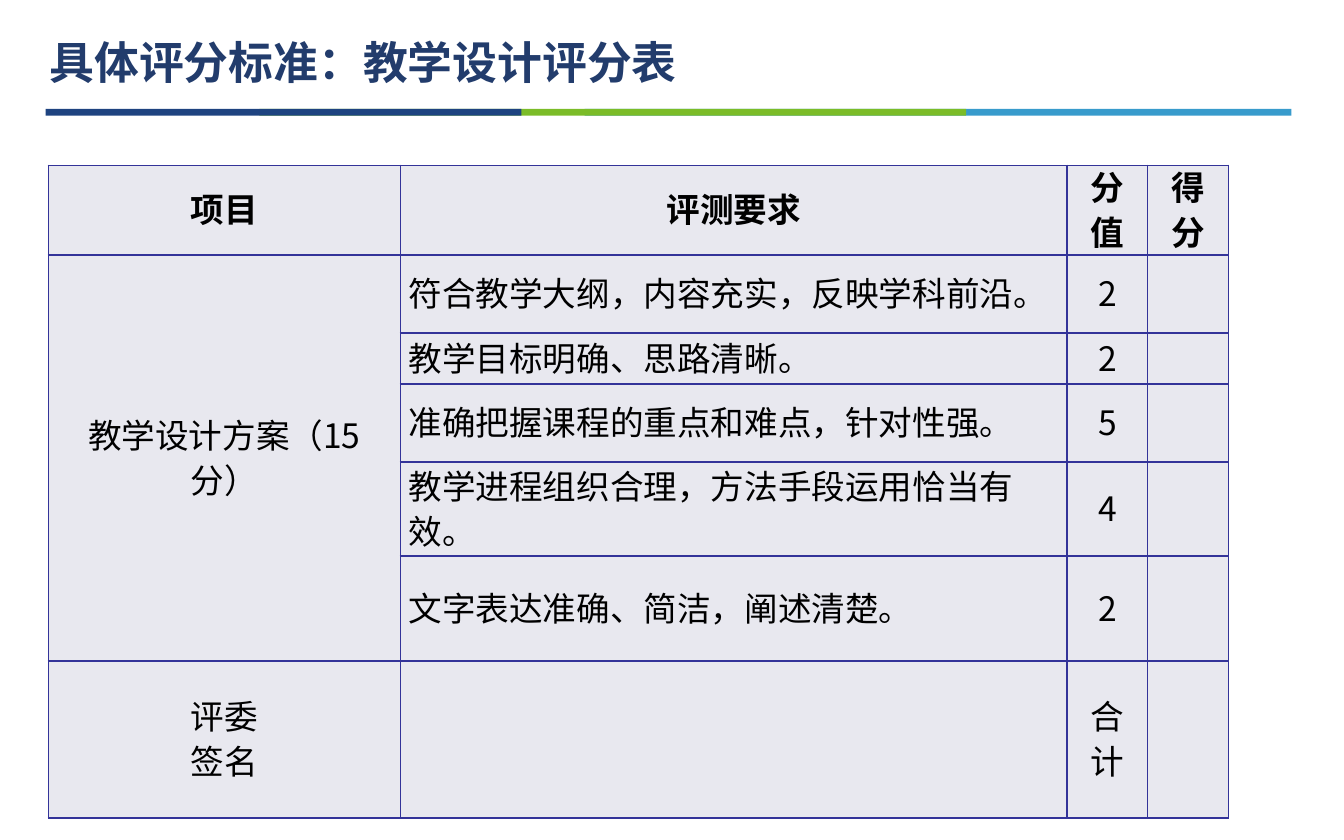
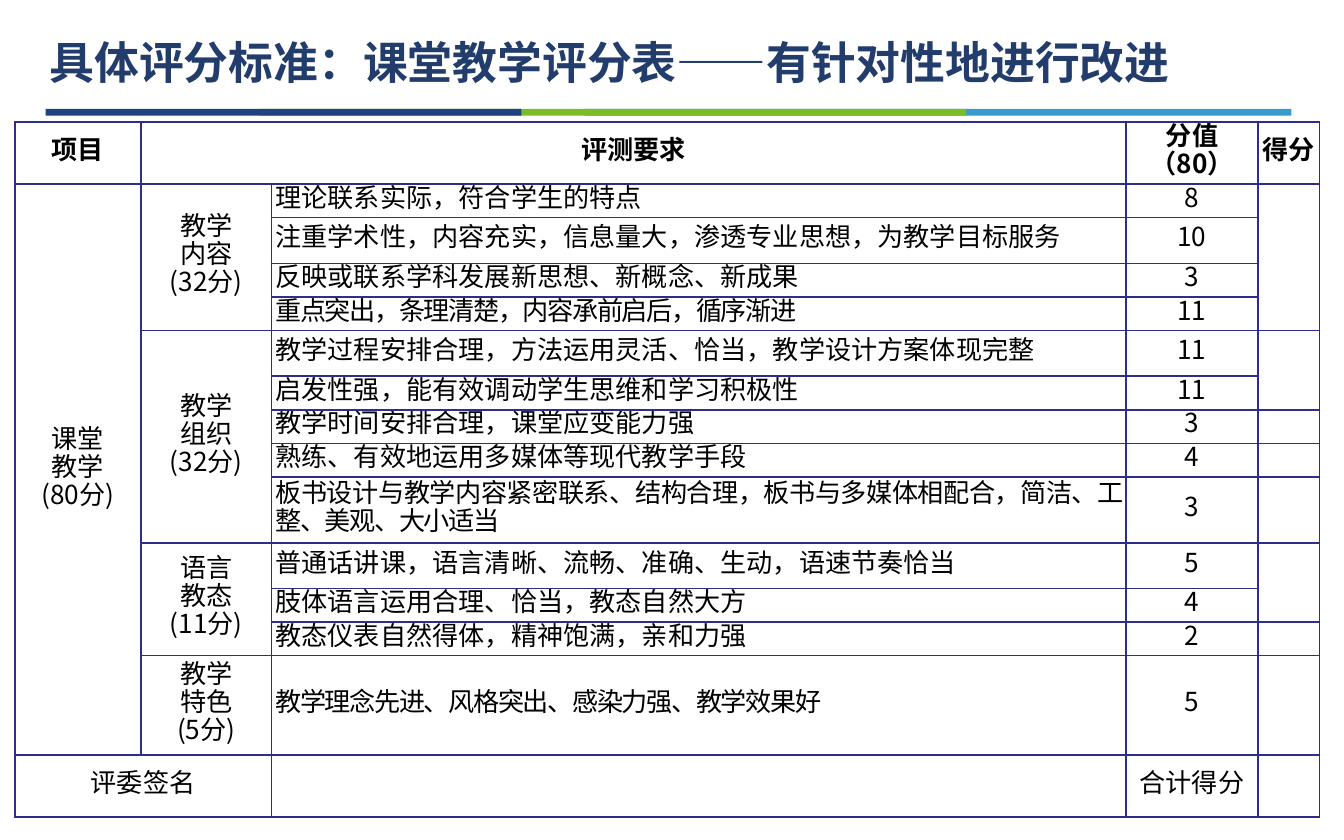
from lxml import etree
from pptx import Presentation
from pptx import util as u
from pptx.dml.color import RGBColor
from pptx.enum import shapes, text
from pptx.oxml import ns

# Shared style
FONT = "Noto Sans CJK SC"
BLACK = RGBColor(0x00, 0x00, 0x00)
TITLE_BLUE = RGBColor(0x22, 0x3C, 0x6C)
SKY = RGBColor(0x38, 0x9B, 0xCC)
GREEN = RGBColor(0x7B, 0xBC, 0x28)
NAVY = RGBColor(0x1E, 0x43, 0x80)
PALE = RGBColor(0xE8, 0xE8, 0xEF)
INDIGO = RGBColor(0x33, 0x33, 0x99)
DEEP_INDIGO = RGBColor(0x2D, 0x2D, 0x8A)
BANDS = [(4.35, 5.26, SKY), (1.93, 5.26, GREEN), (0.34, 3.54, NAVY)]
CENTER, LEFT, JUSTIFY = (
    text.PP_ALIGN.CENTER, text.PP_ALIGN.LEFT, text.PP_ALIGN.JUSTIFY)

# Content: merges are (first row, first column, last row, last column)
design_sheet = {
    "title": "具体评分标准：教学设计评分表",
    "title_width": 4.91,
    "at": (0.36, 1.23),
    "cols": [2.62, 4.96, 0.6, 0.6],
    "rows": [0.58, 0.58, 0.38, 0.58, 0.7, 0.78, 1.17],
    "cells": [
        ["项目", "评测要求", "分值", "得分"],
        ["教学设计方案（15分）", "符合教学大纲，内容充实，反映学科前沿。", "2", ""],
        ["", "教学目标明确、思路清晰。", "2", ""],
        ["", "准确把握课程的重点和难点，针对性强。", "5", ""],
        ["", "教学进程组织合理，方法手段运用恰当有效。", "4", ""],
        ["", "文字表达准确、简洁，阐述清楚。", "2", ""],
        ["评委\n签名", "", "合计", ""],
    ],
    "merges": [(1, 0, 5, 0)],
    "size": 18, "leading": 24, "inset": 0.06,
    "border": INDIGO, "fill": PALE,
    "criteria_col": 1, "criteria_align": LEFT, "condensed_rows": [],
}
teaching_sheet = {
    "title": "具体评分标准：课堂教学评分表——有针对性地进行改进",
    "title_width": 8.67,
    "at": (0.11, 0.91),
    "cols": [0.94, 0.97, 6.36, 0.98, 0.46],
    "rows": [0.46, 0.25, 0.34, 0.25, 0.25, 0.34, 0.25, 0.25,
             0.25, 0.49, 0.34, 0.25, 0.25, 0.74, 0.46],
    "cells": [
        ["项目", "评测要求", "", "分值（80）", "得分"],
        ["课堂\n教学\n(80分)", "教学\n内容\n(32分)", "理论联系实际，符合学生的特点", "8", ""],
        ["", "", "注重学术性，内容充实，信息量大，渗透专业思想，为教学目标服务", "10", ""],
        ["", "", "反映或联系学科发展新思想、新概念、新成果", "3", ""],
        ["", "", "重点突出，条理清楚，内容承前启后，循序渐进", "11", ""],
        ["", "教学\n组织\n(32分)", "教学过程安排合理，方法运用灵活、恰当，教学设计方案体现完整", "11", ""],
        ["", "", "启发性强，能有效调动学生思维和学习积极性", "11", ""],
        ["", "", "教学时间安排合理，课堂应变能力强", "3", ""],
        ["", "", "熟练、有效地运用多媒体等现代教学手段", "4", ""],
        ["", "", "板书设计与教学内容紧密联系、结构合理，板书与多媒体相配合，简洁、工整、美观、大小适当", "3", ""],
        ["", "语言\n教态\n(11分)", "普通话讲课，语言清晰、流畅、准确、生动，语速节奏恰当", "5", ""],
        ["", "", "肢体语言运用合理、恰当，教态自然大方", "4", ""],
        ["", "", "教态仪表自然得体，精神饱满，亲和力强", "2", ""],
        ["", "教学\n特色\n(5分)", "教学理念先进、风格突出、感染力强、教学效果好", "5", ""],
        ["评委签名", "", "", "合计得分", ""],
    ],
    "merges": [(0, 1, 0, 2), (1, 0, 13, 0), (1, 1, 4, 1), (1, 4, 4, 4),
               (5, 1, 9, 1), (5, 4, 6, 4), (10, 1, 12, 1), (10, 4, 11, 4),
               (14, 0, 14, 1)],
    "size": 14, "leading": 15, "inset": 0.03,
    "border": DEEP_INDIGO, "fill": None,
    "criteria_col": 2, "criteria_align": JUSTIFY, "condensed_rows": [4, 9, 13],
}


def style_run(run, size, color, bold):
    for name, value in {"name": FONT, "size": u.Pt(size), "bold": bold}.items():
        setattr(run.font, name, value)
    run.font.color.rgb = color
    east_asian = etree.SubElement(run.font._element, ns.qn("a:ea"))
    east_asian.set("typeface", FONT)


def add_borders(cell, color):
    properties = cell._tc.get_or_add_tcPr()
    for side in ("lnL", "lnR", "lnT", "lnB"):
        line = etree.SubElement(properties, ns.qn(f"a:{side}"), w=str(u.Pt(1)))
        fill = etree.SubElement(line, ns.qn("a:solidFill"))
        etree.SubElement(fill, ns.qn("a:srgbClr"), val=str(color))


prs = Presentation()
prs.slide_width, prs.slide_height = u.Inches(10), u.Inches(6.25)

for sheet in (design_sheet, teaching_sheet):
    slide = prs.slides.add_slide(prs.slide_layouts[6])

    # Three-colour band under the title
    for left, width, color in BANDS:
        band = slide.shapes.add_shape(
            shapes.MSO_SHAPE.RECTANGLE,
            *map(u.Inches, (left, 0.81, width, 0.05)))
        band.shadow.inherit = False
        band.fill.solid()
        band.fill.fore_color.rgb = color
        band.line.fill.background()

    # Title
    title = slide.shapes.add_textbox(
        *map(u.Inches, (0.27, 0.21, sheet["title_width"], 0.5))).text_frame
    title.word_wrap = False
    title.auto_size = text.MSO_AUTO_SIZE.SHAPE_TO_FIT_TEXT
    title.text = sheet["title"]
    style_run(title.paragraphs[0].runs[0], 24, TITLE_BLUE, True)

    # Scoring table
    cols, rows = sheet["cols"], sheet["rows"]
    score_table = slide.shapes.add_table(
        len(rows), len(cols),
        *map(u.Inches, (*sheet["at"], sum(cols), sum(rows)))).table
    score_table.first_row = score_table.horz_banding = False
    for column, width in zip(score_table.columns, cols):
        column.width = u.Inches(width)
    for row, height in zip(score_table.rows, rows):
        row.height = u.Inches(height)

    cell_format = {
        "vertical_anchor": text.MSO_ANCHOR.MIDDLE,
        "margin_left": u.Inches(sheet["inset"]),
        "margin_right": u.Inches(sheet["inset"]),
        "margin_top": 0, "margin_bottom": 0,
    }
    for r, labels in enumerate(sheet["cells"]):
        for c, label in enumerate(labels):
            cell = score_table.cell(r, c)
            for name, value in cell_format.items():
                setattr(cell, name, value)
            add_borders(cell, sheet["border"])
            if sheet["fill"] is None:
                cell.fill.background()
            else:
                cell.fill.solid()
                cell.fill.fore_color.rgb = sheet["fill"]

            is_criterion = c == sheet["criteria_col"] and r > 0
            cell.text_frame.text = label
            for paragraph in cell.text_frame.paragraphs:
                paragraph.alignment = sheet["criteria_align"] if is_criterion else CENTER
                paragraph.line_spacing = u.Pt(sheet["leading"])
                # Keeps closing punctuation inside the cell
                paragraph._p.get_or_add_pPr().set("hangingPunct", "0")
                for run in paragraph.runs:
                    style_run(run, sheet["size"], BLACK, r == 0)
                    if is_criterion and r in sheet["condensed_rows"]:
                        run.font._element.set("spc", "-80")
                # Keeps empty cells as low as the filled ones
                if not label:
                    etree.SubElement(paragraph._p, ns.qn("a:endParaRPr"),
                                     sz=str(sheet["size"] * 100))

    for top, left, bottom, right in sheet["merges"]:
        score_table.cell(top, left).merge(score_table.cell(bottom, right))

prs.save("out.pptx")
